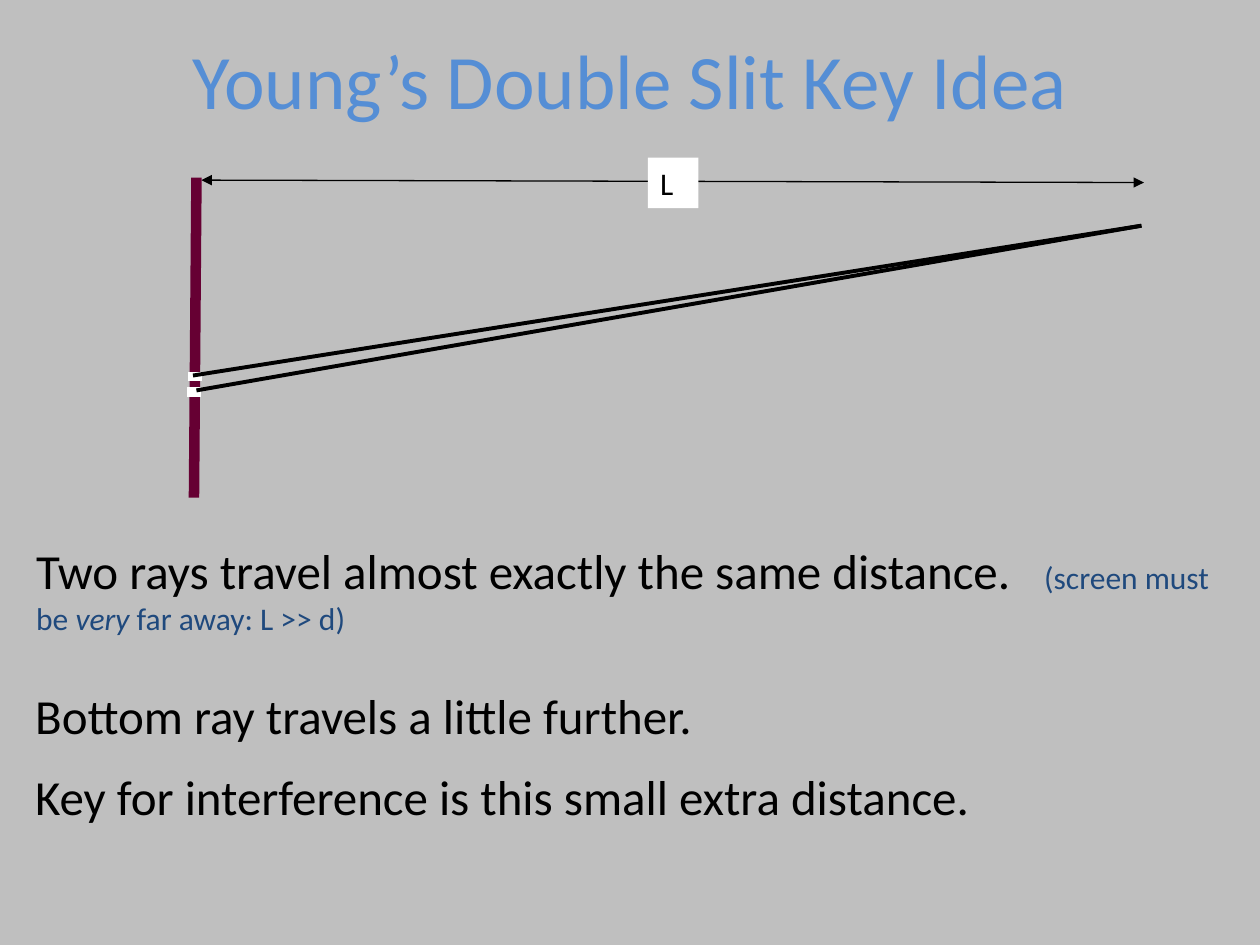
from lxml import etree
from pptx import Presentation
from pptx.dml.color import RGBColor
from pptx.enum.shapes import MSO_CONNECTOR, MSO_SHAPE
from pptx.enum.text import MSO_ANCHOR, PP_ALIGN
from pptx.oxml.ns import qn
from pptx.util import Cm, Pt

STRAIGHT = MSO_CONNECTOR.STRAIGHT
RECTANGLE = MSO_SHAPE.RECTANGLE
MIDDLE, TOP = MSO_ANCHOR.MIDDLE, MSO_ANCHOR.TOP
CENTER, LEFT = PP_ALIGN.CENTER, PP_ALIGN.LEFT

GRAY = RGBColor(0xBF, 0xBF, 0xBF)
BLACK = RGBColor(0, 0, 0)
WHITE = RGBColor(0xFF, 0xFF, 0xFF)
MAROON = RGBColor(0x66, 0, 0x33)
TITLE_BLUE = RGBColor(0x55, 0x8E, 0xD5)
NOTE_BLUE = RGBColor(0x1F, 0x49, 0x7D)
FONT = "Calibri"


def add_line(shapes, start, end, color, width, arrows=False):
    """Draw a straight line between two points in centimetres."""
    line = shapes.add_connector(STRAIGHT, *map(Cm, start + end))
    line.line.color.rgb = color
    line.line.width = Pt(width)
    properties = line._element.spPr
    if arrows:
        outline = properties.find(qn("a:ln"))
        for tag in ("a:headEnd", "a:tailEnd"):
            etree.SubElement(outline, qn(tag), type="triangle")
    etree.SubElement(properties, qn("a:effectLst"))


def style_font(font, size, color):
    """Set the typeface, size and colour of a font."""
    font.name = FONT
    font.size = Pt(size)
    font.color.rgb = color


def add_text(page, place, lines, size, color=BLACK, align=LEFT, anchor=TOP):
    """Add a wrapping text box with one paragraph per line and return its frame."""
    frame = page.shapes.add_textbox(*map(Cm, place)).text_frame
    frame.word_wrap = True
    frame.vertical_anchor = anchor
    for index, words in enumerate(lines):
        para = frame.paragraphs[0]
        if index:
            para = frame.add_paragraph()
            para.space_before = Pt(13)
        para.text = words
        para.alignment = align
        style_font(para.font, size, color)
    return frame


def add_distance_label(page):
    """Add the white box that names the distance to the screen."""
    box = page.shapes.add_shape(RECTANGLE, Cm(13.06), Cm(3.18), Cm(1.02), Cm(1.02))
    box.shadow.inherit = False
    box.fill.solid()
    box.fill.fore_color.rgb = WHITE
    box.line.fill.background()
    para = box.text_frame.paragraphs[0]
    para.text = "L"
    para.alignment = LEFT
    style_font(para.font, 18, BLACK)


def add_diagram(page):
    """Draw the distance arrow, the barrier with two slits and the two rays."""
    add_line(page.shapes, (4.06, 3.63), (23.06, 3.68), BLACK, 0.75, arrows=True)
    add_line(page.shapes, (3.96, 3.58), (3.91, 10.03), MAROON, 6)
    add_distance_label(page)
    for x, y in ((3.94, 7.49), (3.91, 7.8)):
        add_line(page.shapes, (x, y), (x, y + 0.2), WHITE, 8)
    rays = page.shapes.add_group_shape()
    for slit in ((3.89, 7.57), (3.96, 7.87)):
        add_line(rays.shapes, slit, (23.01, 4.55), BLACK, 2.25)


def add_explanation(page):
    """Write the statements below the diagram."""
    frame = add_text(page, (0.48, 10.77, 24.56, 2.46),
                     ["Two rays travel almost exactly the same distance."], 28)
    para = frame.paragraphs[0]
    for words, italic in (("\t(screen must be ", False), ("very", True),
                          (" far away: L >> d)", False)):
        span = para.add_run()
        span.text = words
        span.font.italic = italic
        style_font(span.font, 18, NOTE_BLUE)
    add_text(page, (0.46, 13.69, 23.44, 3.23),
             ["Bottom ray travels a little further.",
              "Key for interference is this small extra distance."], 28)


def main():
    """Build and save the slide."""
    deck = Presentation()
    deck.slide_width, deck.slide_height = Cm(25.4), Cm(19.05)
    page = deck.slides.add_slide(deck.slide_layouts[6])
    page.background.fill.solid()
    page.background.fill.fore_color.rgb = GRAY
    add_text(page, (0, 0, 25.4, 3.18), ["Young’s Double Slit Key Idea"],
             44, TITLE_BLUE, CENTER, MIDDLE)
    add_diagram(page)
    add_explanation(page)
    deck.save("out.pptx")


if __name__ == "__main__":
    main()
